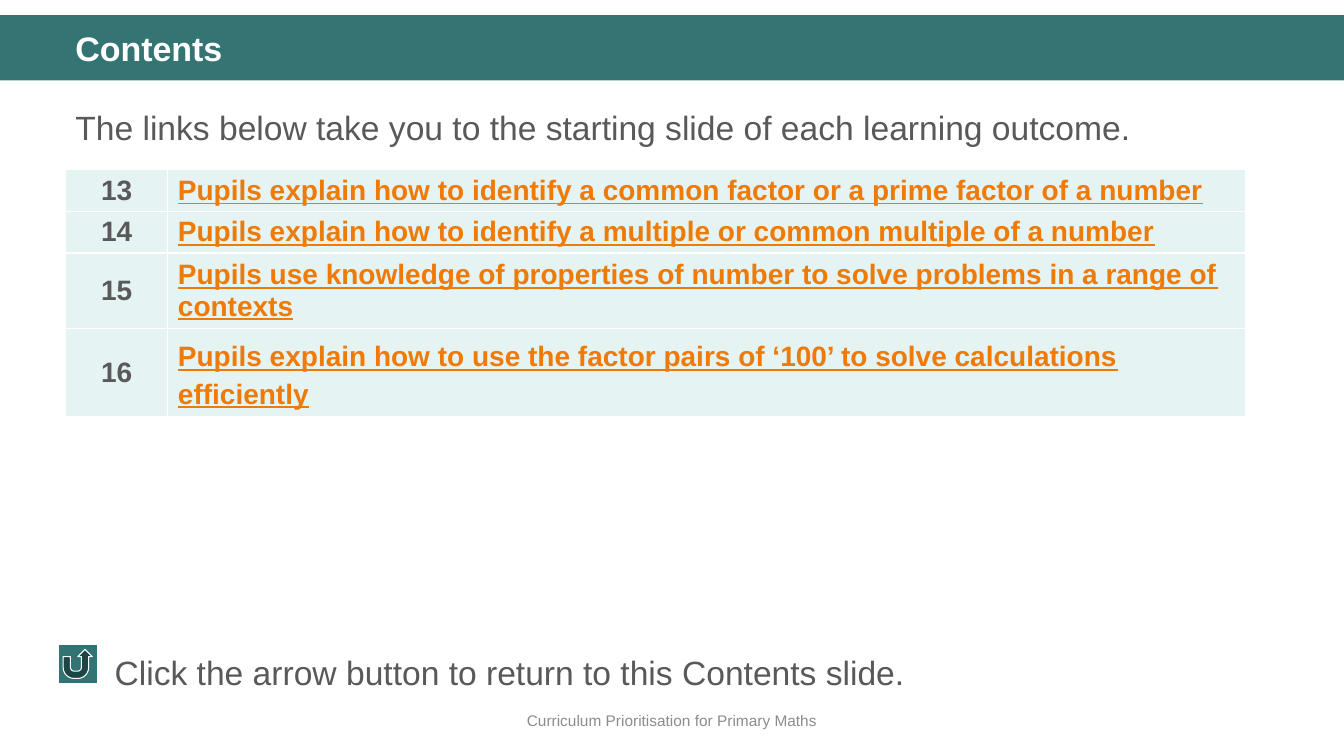
from dataclasses import dataclass

from lxml.etree import SubElement
from pptx import Presentation
from pptx.dml.color import RGBColor
from pptx.enum.shapes import MSO_SHAPE
from pptx.enum.text import MSO_ANCHOR, PP_ALIGN
from pptx.oxml.ns import qn
from pptx.shapes.autoshape import Shape
from pptx.slide import Slide
from pptx.table import _Cell as Cell
from pptx.text.text import TextFrame
from pptx.util import Cm, Pt

FONT = "Arial"
BANNER_TEAL = RGBColor(0x34, 0x75, 0x74)
BUTTON_TEAL = RGBColor(0x32, 0x74, 0x73)
CELL_TINT = RGBColor(0xE5, 0xF3, 0xF2)
LINK_ORANGE = RGBColor(0xEE, 0x7B, 0x08)
BODY_GREY = RGBColor(0x59, 0x59, 0x59)
FOOTER_GREY = RGBColor(0x8C, 0x8C, 0x8C)
WHITE = RGBColor(0xFF, 0xFF, 0xFF)


@dataclass(frozen=True)
class Box:
    left: float
    top: float
    width: float
    height: float

    def lengths(self) -> tuple[Cm, Cm, Cm, Cm]:
        return Cm(self.left), Cm(self.top), Cm(self.width), Cm(self.height)


@dataclass(frozen=True)
class Outcome:
    number: int
    title: str
    height: float
    spacing: float = 1.0


SLIDE = Box(0, 0, 33.87, 19.05)
BANNER = Box(0, 0.38, SLIDE.width, 1.65)
TITLE = Box(1.65, 0.69, 30.94, 1.19)
INTRO = Box(1.65, 2.36, 30.94, 8.92)
TABLE = Box(1.65, 4.28, 29.75, 6.05)
BUTTON = Box(1.47, 16.24, 0.98, 0.98)
HINT = Box(2.64, 16.31, 28.75, 1.27)
FOOTER = Box(0, 17.65, SLIDE.width, 1.02)
NUMBER_WIDTH = 2.58

OUTCOMES = [
    Outcome(13, "Pupils explain how to identify a common factor or a prime factor of a number", 1.04),
    Outcome(14, "Pupils explain how to identify a multiple or common multiple of a number", 1.04),
    Outcome(15, "Pupils use knowledge of properties of number to solve problems in a range of contexts", 1.83),
    Outcome(16, "Pupils explain how to use the factor pairs of ‘100’ to solve calculations efficiently", 2.14, 1.2),
]


def write_text(
    frame: TextFrame,
    text: str,
    *,
    size: float = 24,
    color: RGBColor = BODY_GREY,
    bold: bool = False,
    underline: bool = False,
    align: PP_ALIGN = PP_ALIGN.LEFT,
    spacing: float = 1.0,
) -> None:
    frame.word_wrap = True
    paragraph = frame.paragraphs[0]
    paragraph.alignment = align
    paragraph.line_spacing = spacing
    run = paragraph.add_run()
    run.text = text
    run.font.name = FONT
    run.font.size = Pt(size)
    run.font.bold = bold
    run.font.underline = underline
    run.font.color.rgb = color


def add_text_box(slide: Slide, box: Box) -> TextFrame:
    return slide.shapes.add_textbox(*box.lengths()).text_frame


def add_filled_shape(slide: Slide, preset: MSO_SHAPE, box: Box, color: RGBColor) -> Shape:
    shape = slide.shapes.add_shape(preset, *box.lengths())
    shape.shadow.inherit = False
    shape.fill.solid()
    shape.fill.fore_color.rgb = color
    shape.line.fill.background()
    return shape


def format_cell(cell: Cell) -> None:
    cell.vertical_anchor = MSO_ANCHOR.MIDDLE
    cell.margin_top = cell.margin_bottom = Cm(0.1)
    properties = cell._tc.get_or_add_tcPr()
    for side in ("a:lnL", "a:lnR", "a:lnT", "a:lnB"):
        border = SubElement(properties, qn(side), w=str(Pt(1)))
        fill = SubElement(border, qn("a:solidFill"))
        SubElement(fill, qn("a:srgbClr"), val=str(WHITE))
    cell.fill.solid()
    cell.fill.fore_color.rgb = CELL_TINT


def add_outcome_table(slide: Slide) -> None:
    table = slide.shapes.add_table(len(OUTCOMES), 2, *TABLE.lengths()).table
    table.first_row = False
    table.horz_banding = False
    table.columns[0].width = Cm(NUMBER_WIDTH)
    table.columns[1].width = Cm(TABLE.width - NUMBER_WIDTH)
    for row, outcome in zip(table.rows, OUTCOMES):
        row.height = Cm(outcome.height)
        number_cell, title_cell = row.cells
        format_cell(number_cell)
        format_cell(title_cell)
        write_text(number_cell.text_frame, str(outcome.number), size=20, bold=True, align=PP_ALIGN.CENTER)
        write_text(
            title_cell.text_frame,
            outcome.title,
            size=20,
            color=LINK_ORANGE,
            bold=True,
            underline=True,
            spacing=outcome.spacing,
        )


def main() -> None:
    presentation = Presentation()
    presentation.slide_width = Cm(SLIDE.width)
    presentation.slide_height = Cm(SLIDE.height)
    slide = presentation.slides.add_slide(presentation.slide_layouts[6])

    add_filled_shape(slide, MSO_SHAPE.RECTANGLE, BANNER, BANNER_TEAL)
    footer = add_text_box(slide, FOOTER)
    footer.vertical_anchor = MSO_ANCHOR.MIDDLE
    write_text(
        footer,
        "Curriculum Prioritisation for Primary Maths",
        size=11,
        color=FOOTER_GREY,
        align=PP_ALIGN.CENTER,
    )
    write_text(
        add_text_box(slide, INTRO),
        "The links below take you to the starting slide of each learning outcome.",
        spacing=1.2,
    )
    add_outcome_table(slide)
    button = add_filled_shape(slide, MSO_SHAPE.ACTION_BUTTON_RETURN, BUTTON, BUTTON_TEAL)
    button.line.color.rgb = WHITE
    button.line.width = Pt(0.75)
    write_text(add_text_box(slide, HINT), "Click the arrow button to return to this Contents slide.")
    write_text(add_text_box(slide, TITLE), "Contents", size=24.3, color=WHITE, bold=True, spacing=0.9)

    presentation.save("out.pptx")


if __name__ == "__main__":
    main()
